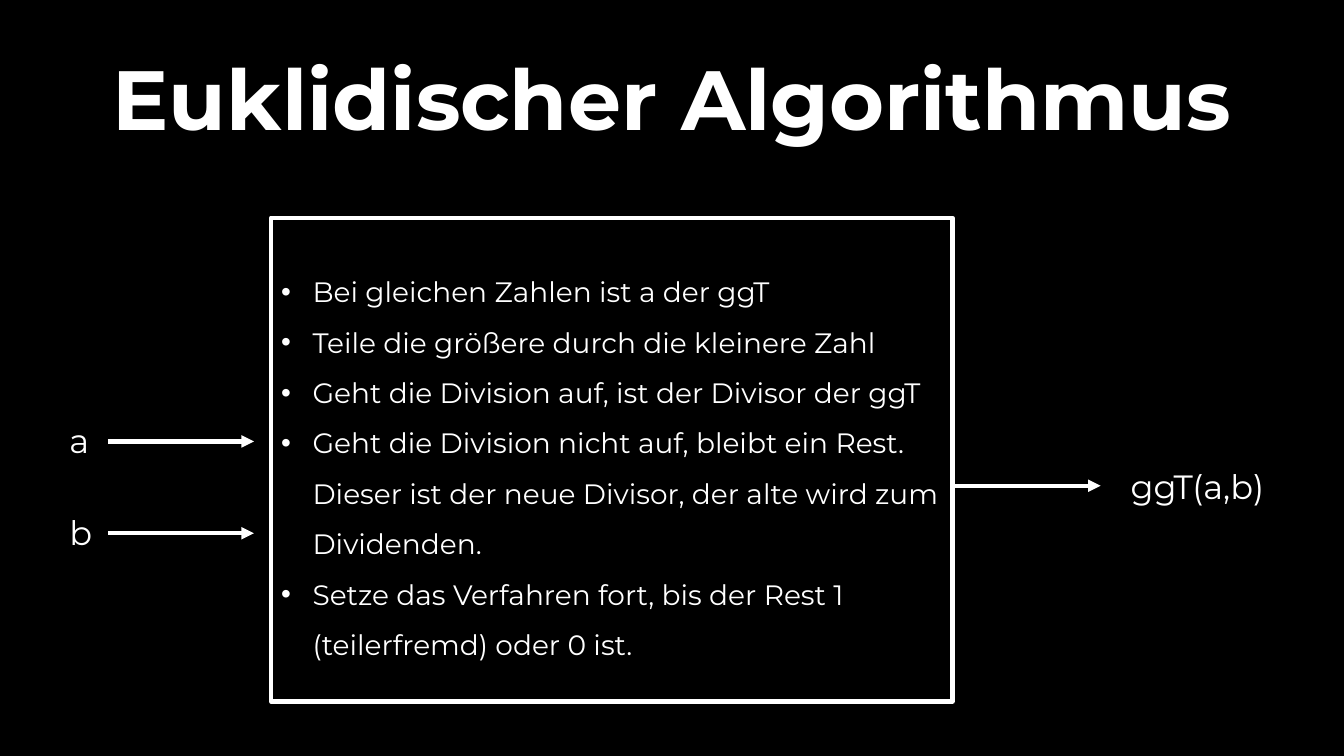
from lxml import etree
from pptx import Presentation
from pptx.dml import color
from pptx.enum import shapes, text
from pptx.oxml import ns
from pptx.util import Pt

WHITE = color.RGBColor(255, 255, 255)
BLACK = color.RGBColor(0, 0, 0)
FONT = "Montserrat"
LINE_WIDTH = 3
ARROW_LENGTH = 104.4
BULLET_INDENT = 22.5
STEPS = [
    "Bei gleichen Zahlen ist a der ggT",
    "Teile die größere durch die kleinere Zahl",
    "Geht die Division auf, ist der Divisor der ggT",
    "Geht die Division nicht auf, bleibt ein Rest. Dieser ist der neue Divisor, "
    "der alte wird zum Dividenden.",
    "Setze das Verfahren fort, bis der Rest 1 (teilerfremd) oder 0 ist.",
]


def apply(target, values):
    for name, value in values.items():
        setattr(target, name, value)


def write(para, words, size, bold=False, **layout):
    apply(para, layout)
    span = para.add_run()
    span.text = words
    apply(span.font, {"name": FONT, "size": Pt(size), "bold": bold})
    span.font.color.rgb = WHITE


def add_label(page, words, left, top, width, height, size=24,
              anchor=text.MSO_ANCHOR.TOP, **style):
    box = page.shapes.add_textbox(Pt(left), Pt(top), Pt(width), Pt(height))
    apply(box.text_frame, {"word_wrap": True, "vertical_anchor": anchor})
    write(box.text_frame.paragraphs[0], words, size, **style)


def add_bullet(para):
    properties = para._p.get_or_add_pPr()
    properties.set("marL", str(Pt(BULLET_INDENT)))
    properties.set("indent", str(-Pt(BULLET_INDENT)))
    etree.SubElement(properties, ns.qn("a:buFont"), typeface="Arial")
    etree.SubElement(properties, ns.qn("a:buChar"), char="•")


def add_steps(page, left, top, width, height):
    box = page.shapes.add_shape(shapes.MSO_SHAPE.RECTANGLE,
                                Pt(left), Pt(top), Pt(width), Pt(height))
    box.shadow.inherit = False
    box.fill.background()
    box.line.color.rgb = WHITE
    box.line.width = Pt(LINE_WIDTH)
    frame = box.text_frame
    apply(frame, {"word_wrap": True, "vertical_anchor": text.MSO_ANCHOR.MIDDLE})
    for index, step in enumerate(STEPS):
        para = frame.add_paragraph() if index else frame.paragraphs[0]
        write(para, step, 20, alignment=text.PP_ALIGN.LEFT, line_spacing=1.5)
        add_bullet(para)


def add_arrow(page, left, top):
    arrow = page.shapes.add_connector(shapes.MSO_CONNECTOR.STRAIGHT, Pt(left), Pt(top),
                                      Pt(left + ARROW_LENGTH), Pt(top))
    arrow.line.color.rgb = WHITE
    arrow.line.width = Pt(LINE_WIDTH)
    etree.SubElement(arrow.line._get_or_add_ln(), ns.qn("a:tailEnd"), type="triangle")
    etree.SubElement(arrow._element.spPr, ns.qn("a:effectLst"))


def main():
    deck = Presentation()
    apply(deck, {"slide_width": Pt(960), "slide_height": Pt(540)})
    page = deck.slides.add_slide(deck.slide_layouts[6])
    page.background.fill.solid()
    page.background.fill.fore_color.rgb = BLACK

    add_label(page, "Euklidischer Algorithmus", 10.8, 22.3, 938.2, 102.2, size=60,
              anchor=text.MSO_ANCHOR.MIDDLE, bold=True, alignment=text.PP_ALIGN.CENTER,
              line_spacing=0.9, space_before=Pt(10))
    add_steps(page, 193.7, 155.5, 486.7, 345.6)
    for name, top in (("a", 296.6), ("b", 362.2)):
        add_label(page, name, 42.5, top, 22.3, 36)
        add_arrow(page, 77, top + 18.7)
    add_arrow(page, 681.8, 347)
    add_label(page, "ggT(a,b)", 800.6, 329, 119.5, 36)
    deck.save("out.pptx")


if __name__ == "__main__":
    main()
